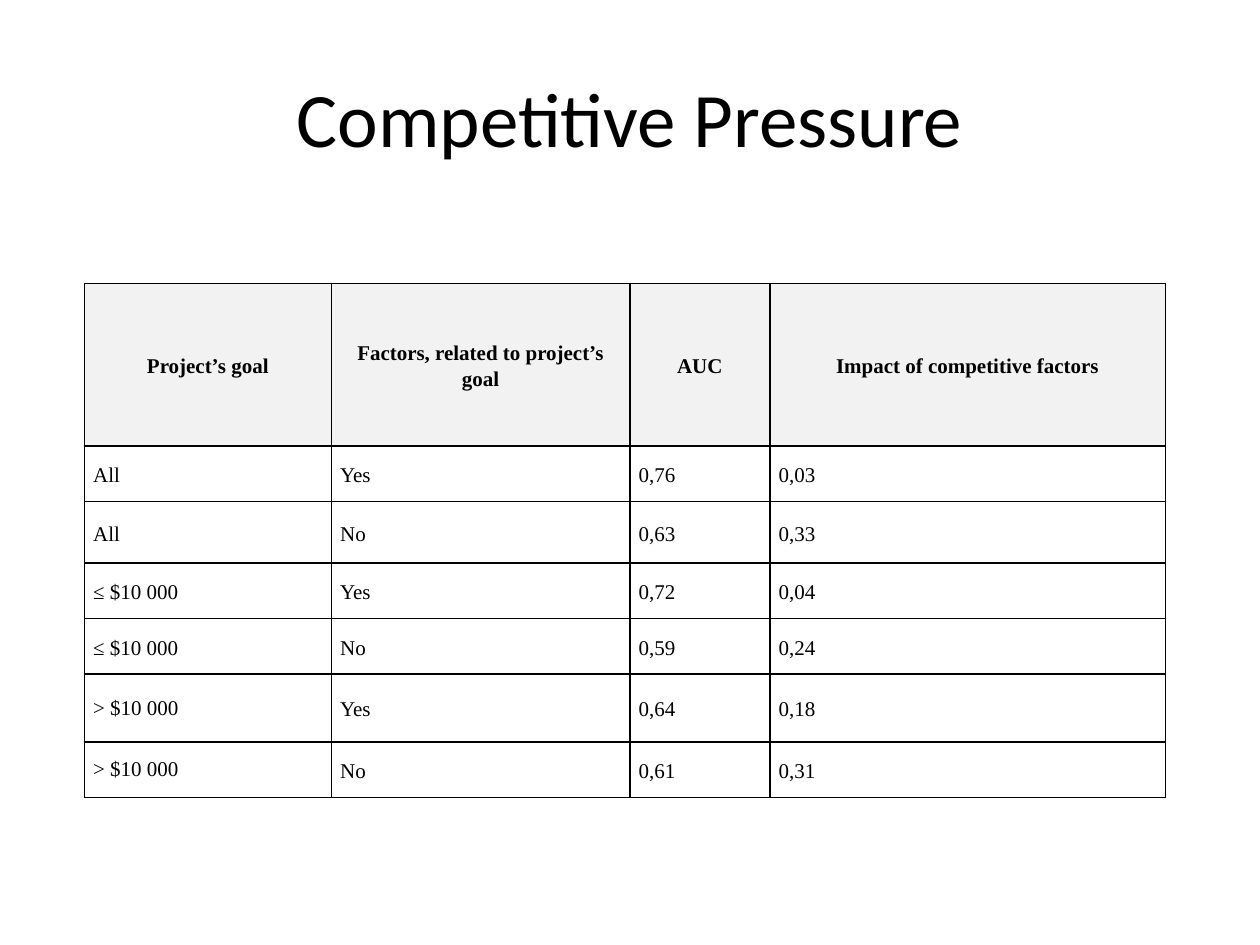
from dataclasses import dataclass

from lxml import etree
from pptx import Presentation
from pptx.dml.color import RGBColor
from pptx.enum.text import MSO_ANCHOR, PP_ALIGN
from pptx.oxml.ns import qn
from pptx.util import Emu, Inches, Pt

MIDDLE = MSO_ANCHOR.MIDDLE
CENTER, LEFT = PP_ALIGN.CENTER, PP_ALIGN.LEFT
BLACK = RGBColor(0x00, 0x00, 0x00)
HEADER_GREY = RGBColor(0xF2, 0xF2, 0xF2)
SLIDE_WIDTH, SLIDE_HEIGHT = Inches(10), Inches(7.5)
BORDER_WIDTH = Pt(1)
CELL_FRAME = {
    "vertical_anchor": MIDDLE,
    "margin_left": Inches(0.07),
    "margin_right": Inches(0.07),
    "margin_top": 0,
    "margin_bottom": 0,
}
TITLE_FRAME = {"vertical_anchor": MIDDLE, "word_wrap": True}
TITLE_FONT = {"name": "Calibri", "size": Pt(44), "bold": False}
HEADER_FONT = {"name": "Times New Roman", "size": Pt(12), "bold": True}
BODY_FONT = {**HEADER_FONT, "bold": False}


@dataclass(frozen=True)
class Area:
    """Position and size in percent of the slide."""
    left: float
    top: float
    width: float
    height: float

    def box(self) -> tuple:
        return across(self.left), down(self.top), across(self.width), down(self.height)


@dataclass(frozen=True)
class Result:
    """One table row; its height is in percent of the slide."""
    height: float
    texts: tuple
    goal_spacing: float = 1.15


# Table content and grid
COLUMN_SHARES = (19.6, 23.7, 11.1, 31.4)
HEADER = Result(17.2, ("Project’s goal", "Factors, related to project’s goal",
                       "AUC", "Impact of competitive factors"))
RESULTS = (
    Result(5.87, ("All", "Yes", "0,76", "0,03")),
    Result(6.53, ("All", "No", "0,63", "0,33")),
    Result(5.87, ("≤ $10 000", "Yes", "0,72", "0,04")),
    Result(5.87, ("≤ $10 000", "No", "0,59", "0,24")),
    Result(7.2, ("> $10 000", "Yes", "0,64", "0,18"), goal_spacing=1.0),
    Result(5.87, ("> $10 000", "No", "0,61", "0,31"), goal_spacing=1.0),
)
ROWS = (HEADER, *RESULTS)
TITLE_AREA = Area(5, 4, 90, 16.67)
TABLE_AREA = Area(6.7, 30, sum(COLUMN_SHARES), sum(row.height for row in ROWS))


def across(percent: float) -> Emu:
    return Emu(round(SLIDE_WIDTH * percent / 100))


def down(percent: float) -> Emu:
    return Emu(round(SLIDE_HEIGHT * percent / 100))


def apply(target, formats: dict) -> None:
    for attribute, value in formats.items():
        setattr(target, attribute, value)


def write(frame, text: str, font: dict, paragraph_format: dict) -> None:
    paragraph = frame.paragraphs[0]
    apply(paragraph, paragraph_format)
    run = paragraph.add_run()
    run.text = text
    apply(run.font, font)
    run.font.color.rgb = BLACK


def draw_borders(cell) -> None:
    properties = cell._tc.get_or_add_tcPr()
    for position, side in enumerate(("a:lnL", "a:lnR", "a:lnT", "a:lnB")):
        line = etree.Element(qn(side), w=str(BORDER_WIDTH))
        fill = etree.SubElement(line, qn("a:solidFill"))
        etree.SubElement(fill, qn("a:srgbClr"), val=str(BLACK))
        properties.insert(position, line)


def add_title(slide, text: str) -> None:
    frame = slide.shapes.add_textbox(*TITLE_AREA.box()).text_frame
    apply(frame, TITLE_FRAME)
    write(frame, text, TITLE_FONT, {"alignment": CENTER})


def fill_row(table, index: int, result: Result) -> None:
    is_header = result is HEADER
    table.rows[index].height = down(result.height)
    for column, text in enumerate(result.texts):
        cell = table.cell(index, column)
        apply(cell, CELL_FRAME)
        if is_header:
            cell.fill.solid()
            cell.fill.fore_color.rgb = HEADER_GREY
        else:
            cell.fill.background()
        draw_borders(cell)
        write(cell.text_frame, text, HEADER_FONT if is_header else BODY_FONT, {
            "alignment": CENTER if is_header else LEFT,
            "line_spacing": result.goal_spacing if column == 0 else 1.15,
        })


def add_results(slide) -> None:
    table = slide.shapes.add_table(
        len(ROWS), len(COLUMN_SHARES), *TABLE_AREA.box()).table
    apply(table, {"first_row": False, "horz_banding": False})
    for column, share in zip(table.columns, COLUMN_SHARES):
        column.width = across(share)
    for index, result in enumerate(ROWS):
        fill_row(table, index, result)


def main() -> None:
    presentation = Presentation()
    apply(presentation, {"slide_width": SLIDE_WIDTH, "slide_height": SLIDE_HEIGHT})
    slide = presentation.slides.add_slide(presentation.slide_layouts[6])
    add_title(slide, "Competitive Pressure")
    add_results(slide)
    presentation.save("out.pptx")


if __name__ == "__main__":
    main()
